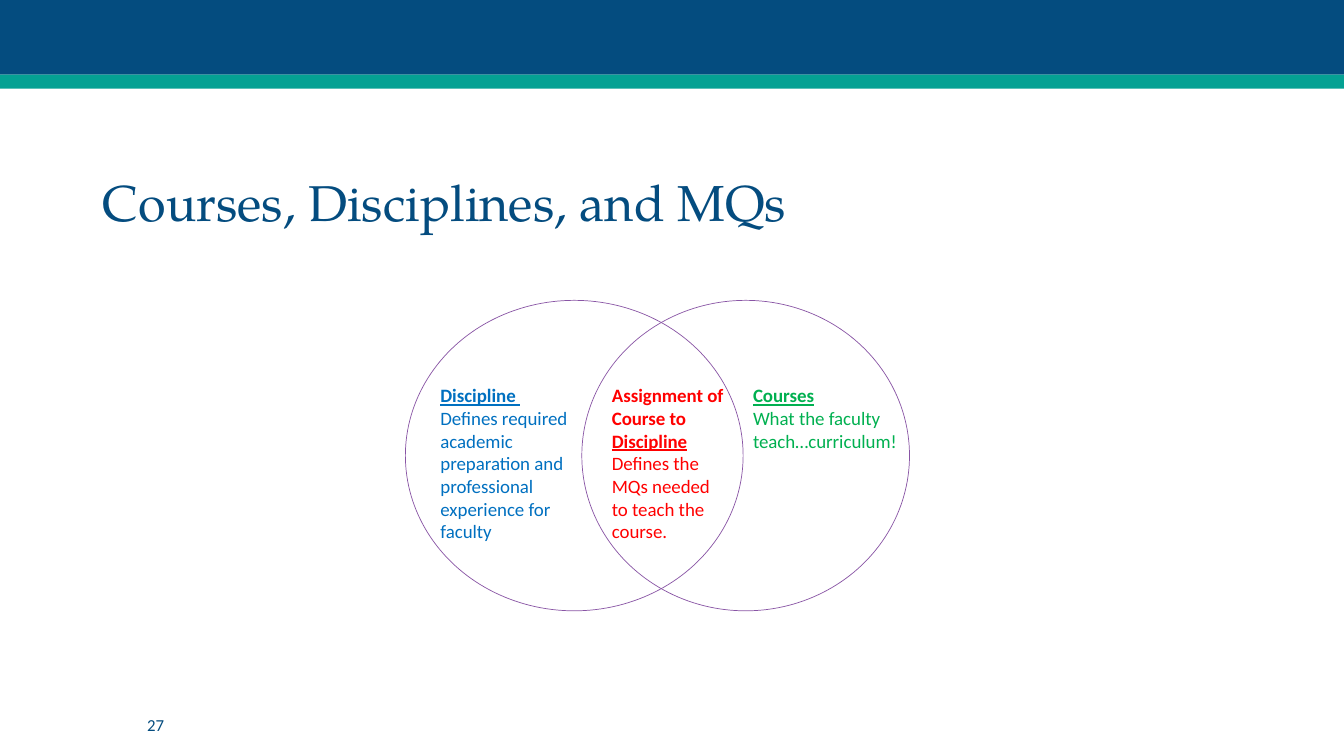
from dataclasses import dataclass

from pptx import Presentation
from pptx.dml.color import RGBColor as Rgb
from pptx.enum.shapes import MSO_SHAPE as Preset
from pptx.enum.text import MSO_ANCHOR as Anchor, MSO_AUTO_SIZE as AutoSize, PP_ALIGN as Align
from pptx.util import Inches, Pt


@dataclass(frozen=True)
class Theme:
    navy: str = "044C7F"
    teal: str = "04A193"
    purple: str = "8955A5"
    blue: str = "0070C0"
    red: str = "FF0000"
    green: str = "00B050"
    title_font: str = "TeX Gyre Pagella"
    body_font: str = "Calibri"
    title_size: float = 36
    body_size: float = 13.5
    number_size: float = 12


theme = Theme()
deck = Presentation()
deck.slide_width, deck.slide_height = Inches(13.33), Inches(7.5)
slide = deck.slides.add_slide(deck.slide_layouts[5])
shapes = slide.shapes


def area(left, top, width, height):
    """Turn percentages of the slide's size into lengths."""
    across, down = deck.slide_width / 100, deck.slide_height / 100
    return int(left * across), int(top * down), int(width * across), int(height * down)


def style(run, font, size, color, bold=False, underline=False):
    run.font.name, run.font.size = font, Pt(size)
    run.font.bold, run.font.underline = bold, underline
    run.font.color.rgb = Rgb.from_string(color)


# Header bands
for top, height, color in [(0, 9.87, theme.navy), (9.87, 1.87, theme.teal)]:
    band = shapes.add_shape(Preset.RECTANGLE, *area(0, top, 100, height))
    band.shadow.inherit = False
    band.fill.solid()
    band.fill.fore_color.rgb = Rgb.from_string(color)
    band.line.fill.background()

# Title
title = shapes.title
title.left, title.top, title.width, title.height = area(6.9, 14.8, 86.27, 16.67)
heading = title.text_frame
heading.text = "Courses, Disciplines, and MQs"
heading.auto_size = AutoSize.NONE
heading.vertical_anchor = Anchor.BOTTOM
heading.paragraphs[0].alignment = Align.LEFT
heading.paragraphs[0].line_spacing = 0.9
style(heading.paragraphs[0].runs[0], theme.title_font, theme.title_size, theme.navy)

# Slide number
number = shapes.add_textbox(*area(10.2, 94.27, 6.75, 3.33)).text_frame
number.text = "27"
number.word_wrap = True
number.vertical_anchor = Anchor.MIDDLE
style(number.paragraphs[0].runs[0], theme.body_font, theme.number_size, theme.navy)

# Overlapping circles
for left, width in [(30.16, 25.13), (43.29, 24.38)]:
    circle = shapes.add_shape(Preset.OVAL, *area(left, 39.73, width, 41.07))
    circle.shadow.inherit = False
    circle.fill.background()
    circle.line.color.rgb = Rgb.from_string(theme.purple)
    circle.line.width = Pt(0.5)

# Circle texts: left, width, height, colour, paragraphs of (text, bold, underline)
regions = [
    (32.03, 12.75, 22.53, theme.blue, [
        [("Discipline", True, True), (" ", False, True)],
        [("Defines required academic preparation and professional experience for faculty",
          False, False)]]),
    (55.29, 12.3, 13.47, theme.green, [
        [("Courses", True, True)],
        [("What the faculty teach…curriculum!", False, False)]]),
    (44.79, 10.2, 25.6, theme.red, [
        [("Assignment of Course to ", True, False), ("Discipline", True, True),
         (" Defines the MQs needed to teach the course.", False, False)]]),
]
for left, width, height, color, paragraphs in regions:
    region = shapes.add_textbox(*area(left, 50.13, width, height)).text_frame
    region.word_wrap = True
    region.auto_size = AutoSize.SHAPE_TO_FIT_TEXT
    for index, parts in enumerate(paragraphs):
        line = region.add_paragraph() if index else region.paragraphs[0]
        for words, bold, underline in parts:
            run = line.add_run()
            run.text = words
            style(run, theme.body_font, theme.body_size, color, bold, underline)

deck.save("out.pptx")
